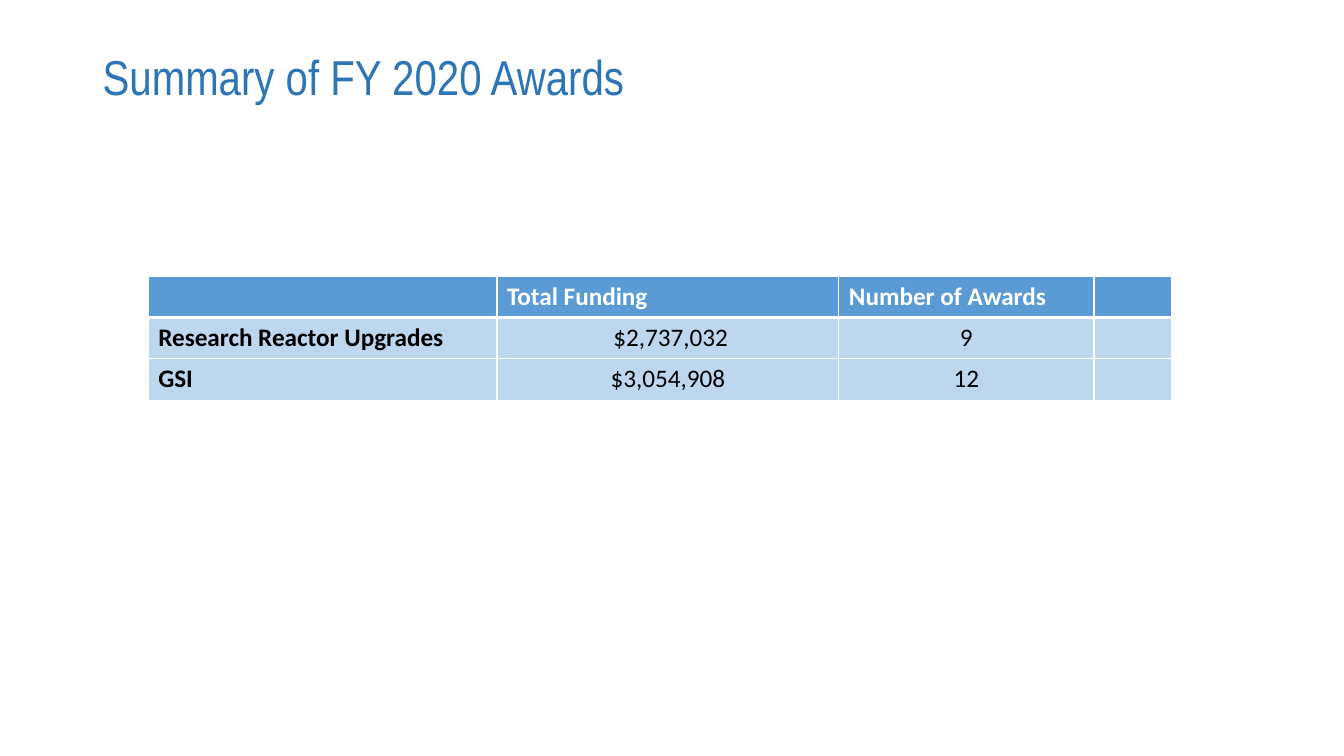
from lxml.etree import SubElement
from pptx import Presentation
from pptx.dml.color import RGBColor
from pptx.enum.text import MSO_ANCHOR, PP_ALIGN
from pptx.oxml.ns import qn
from pptx.util import Inches, Pt

# Content
TITLE = "Summary of FY 2020 Awards"
AWARDS = [
    ["", "Total Funding", "Number of Awards", ""],
    ["Research Reactor Upgrades", " $2,737,032", "9", ""],
    ["GSI", "$3,054,908", "12", ""],
]

# Layout and formats
COLUMN_WIDTHS = [3.46, 3.39, 2.53, 0.77]
ROW_HEIGHT = 0.41
TITLE_FORMAT = {"name": "Arial Narrow", "size": Pt(35), "color": "2E75B6"}
HEADER_FORMAT = {"name": "Calibri", "size": Pt(18), "bold": True, "color": "FFFFFF"}
LABEL_FORMAT = {**HEADER_FORMAT, "color": "000000"}
VALUE_FORMAT = {**LABEL_FORMAT, "bold": False}
HEADER_FILL, BODY_FILL, BORDER = "5B9BD5", "BDD7EE", "FFFFFF"


def color(value):
    return RGBColor.from_string(value)


def set_font(font, formats):
    for name, value in formats.items():
        if name == "color":
            font.color.rgb = color(value)
        else:
            setattr(font, name, value)


def write(para, text, formats):
    set_font(para.font, formats)
    if text:
        span = para.add_run()
        span.text = text
        set_font(span.font, formats)


def set_borders(cell, widths):
    properties = cell._tc.get_or_add_tcPr()
    for side, width in widths.items():
        line = SubElement(properties, qn(f"a:ln{side}"), w=str(Pt(width)))
        fill = SubElement(line, qn("a:solidFill"))
        SubElement(fill, qn("a:srgbClr"), val=BORDER)


def set_fill(cell, value):
    properties = cell._tc.get_or_add_tcPr()
    fill = SubElement(properties, qn("a:solidFill"))
    SubElement(fill, qn("a:srgbClr"), val=value)


def add_title(page):
    box = page.shapes.add_textbox(Inches(0.92), Inches(0.21), Inches(11.5), Inches(1.17))
    frame = box.text_frame
    frame.word_wrap = True
    frame.vertical_anchor = MSO_ANCHOR.MIDDLE
    para = frame.paragraphs[0]
    para.line_spacing = 0.9
    write(para, TITLE, TITLE_FORMAT)


def add_awards_table(page):
    table = page.shapes.add_table(
        len(AWARDS), len(COLUMN_WIDTHS), Inches(1.47), Inches(2.74),
        Inches(sum(COLUMN_WIDTHS)), Inches(ROW_HEIGHT * len(AWARDS)),
    ).table
    table.horz_banding = False
    for column, width in zip(table.columns, COLUMN_WIDTHS):
        column.width = Inches(width)
    for row_index, values in enumerate(AWARDS):
        table.rows[row_index].height = Inches(ROW_HEIGHT)
        header = row_index == 0
        for column_index, text in enumerate(values):
            cell = table.cell(row_index, column_index)
            para = cell.text_frame.paragraphs[0]
            if header:
                formats = HEADER_FORMAT
            elif column_index == 0:
                formats = LABEL_FORMAT
            else:
                formats = VALUE_FORMAT
                para.alignment = PP_ALIGN.CENTER
            write(para, text, formats)
            # The rule under the header row is heavier
            top = 3 if row_index == 1 else 1
            bottom = 3 if header else 1
            set_borders(cell, {"L": 1, "R": 1, "T": top, "B": bottom})
            set_fill(cell, HEADER_FILL if header else BODY_FILL)


def main():
    deck = Presentation()
    deck.slide_width, deck.slide_height = Inches(13.33), Inches(7.5)
    page = deck.slides.add_slide(deck.slide_layouts[6])
    add_title(page)
    add_awards_table(page)
    deck.save("out.pptx")


if __name__ == "__main__":
    main()
